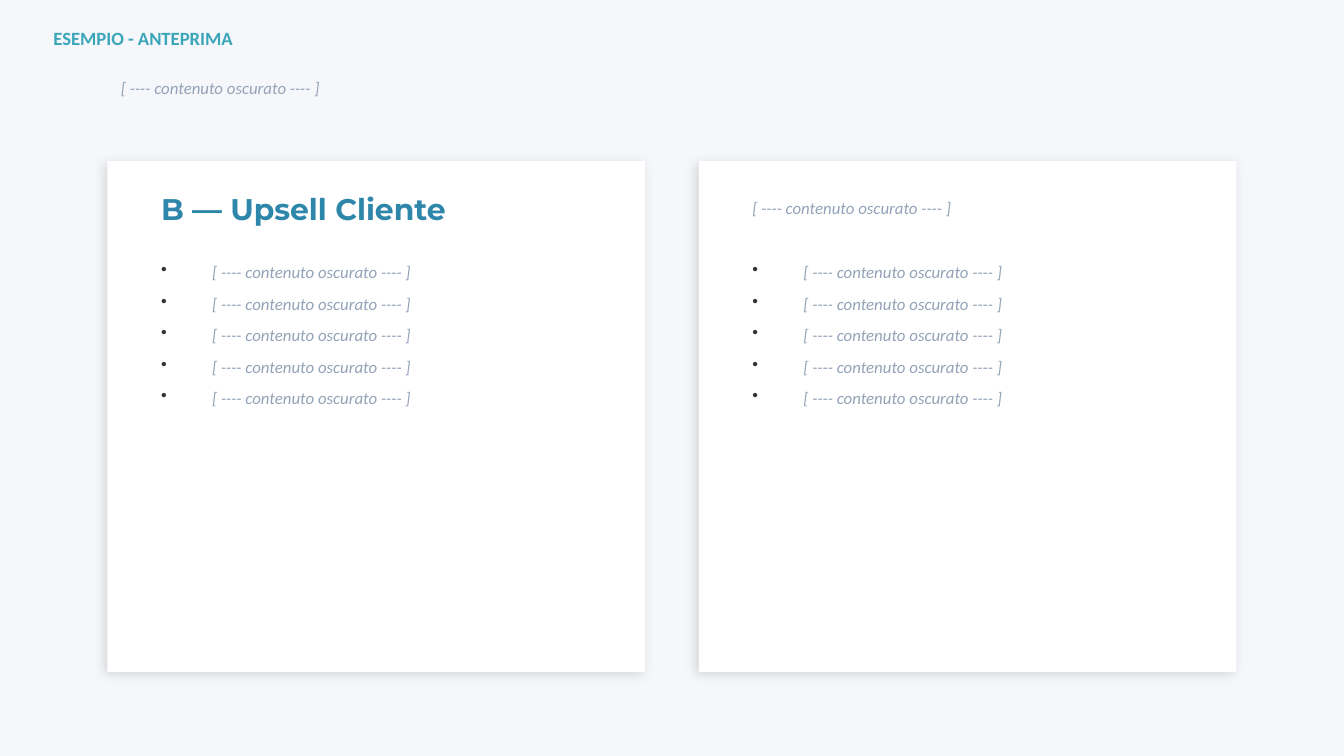
"""Build a preview slide with two shadowed cards of masked bullets."""
from lxml.etree import fromstring
from pptx import Presentation
from pptx.dml.color import RGBColor as Rgb
from pptx.enum.shapes import MSO_SHAPE as Shape
from pptx.enum.text import MSO_ANCHOR as Anchor, MSO_AUTO_SIZE as Auto, PP_ALIGN as Align
from pptx.oxml.ns import nsdecls
from pptx.util import Inches as Inch, Pt

MASK = "[ ---- contenuto oscurato ---- ]"
TAG = "ESEMPIO - ANTEPRIMA"
TITLE = MASK
CARDS = [
    {"head": "B — Upsell Cliente", "style": "head", "points": [MASK] * 5},
    {"head": MASK, "style": "mask", "points": [MASK] * 5},
]

THEME = {
    "back": "F5F7FA",
    "card": "FFFFFF",
    "dot": "333333",
    "mask": {"name": "Calibri", "size": Pt(9), "bold": False, "italic": True, "color": "94A3B8"},
    "head": {"name": "Montserrat", "size": Pt(16), "bold": True, "color": "2E86AB"},
    "tag": {"name": "Calibri", "size": Pt(10), "bold": True, "color": "3AA6B9"},
}

WIDE, HIGH = 10, 5.625
EDGE, GAP, PAD = 0.8, 0.4, 0.3
TOP, TALL, INDENT = 1.2, 3.8, 0.38
COL = (WIDE - 2 * EDGE - GAP * (len(CARDS) - 1)) / len(CARDS)

SHADOW = f"""<a:effectLst {nsdecls("a")}>
<a:outerShdw blurRad="{Pt(6)}" dist="{Pt(2)}" dir="{135 * 60000}" algn="bl" rotWithShape="0">
<a:srgbClr val="000000"><a:alpha val="12000"/></a:srgbClr></a:outerShdw></a:effectLst>"""
BULLET = [
    f'<a:buClr {nsdecls("a")}><a:srgbClr val="{THEME["dot"]}"/></a:buClr>',
    f'<a:buChar {nsdecls("a")} char="•"/>',
]


def place(*box):
    return [Inch(round(n, 2)) for n in box]


def style(font, look):
    for key, value in look.items():
        if key == "color":
            font.color.rgb = Rgb.from_string(value)
        else:
            setattr(font, key, value)


def write(shape, lines, look, bullets=False, **frame):
    text = shape.text_frame
    for key, value in ({"word_wrap": True, "auto_size": Auto.NONE} | frame).items():
        setattr(text, key, value)
    for i, line in enumerate(lines):
        para = text.add_paragraph() if i else text.paragraphs[0]
        para.alignment = Align.LEFT
        if bullets:
            para.space_after = Pt(6)
            props = para._p.get_or_add_pPr()
            props.set("marL", str(Inch(INDENT)))
            props.set("indent", str(-Inch(INDENT)))
            for part in BULLET:
                props.append(fromstring(part))
        run = para.add_run()
        run.text = line
        style(run.font, THEME[look])


def add_card(slide, left, card):
    panel = slide.shapes.add_shape(Shape.RECTANGLE, *place(left, TOP, COL, TALL))
    panel.fill.solid()
    panel.fill.fore_color.rgb = Rgb.from_string(THEME["card"])
    panel.line.fill.background()
    panel._element.spPr.append(fromstring(SHADOW))
    inner, span = left + PAD, COL - 2 * PAD
    head = slide.shapes.add_textbox(*place(inner, TOP + 0.1, span, 0.5))
    write(head, [card["head"]], card["style"], vertical_anchor=Anchor.MIDDLE)
    body = slide.shapes.add_textbox(*place(inner, TOP + 0.7, span, TALL - 1))
    write(body, card["points"], "mask", bullets=True)


def main():
    deck = Presentation()
    deck.slide_width, deck.slide_height = Inch(WIDE), Inch(HIGH)
    slide = deck.slides.add_slide(deck.slide_layouts[5])
    fill = slide.background.fill
    fill.solid()
    fill.fore_color.rgb = Rgb.from_string(THEME["back"])

    title = slide.shapes.title
    title.left, title.top, title.width, title.height = place(EDGE, 0.3, WIDE - 2 * EDGE, 0.7)
    write(title, [TITLE], "mask", vertical_anchor=Anchor.MIDDLE)
    for i, card in enumerate(CARDS):
        add_card(slide, EDGE + i * (COL + GAP), card)
    tag = slide.shapes.add_textbox(*place(0.3, 0.15, 3, 0.35))
    write(tag, [TAG], "tag", word_wrap=False, auto_size=Auto.SHAPE_TO_FIT_TEXT)
    deck.save("out.pptx")


if __name__ == "__main__":
    main()
